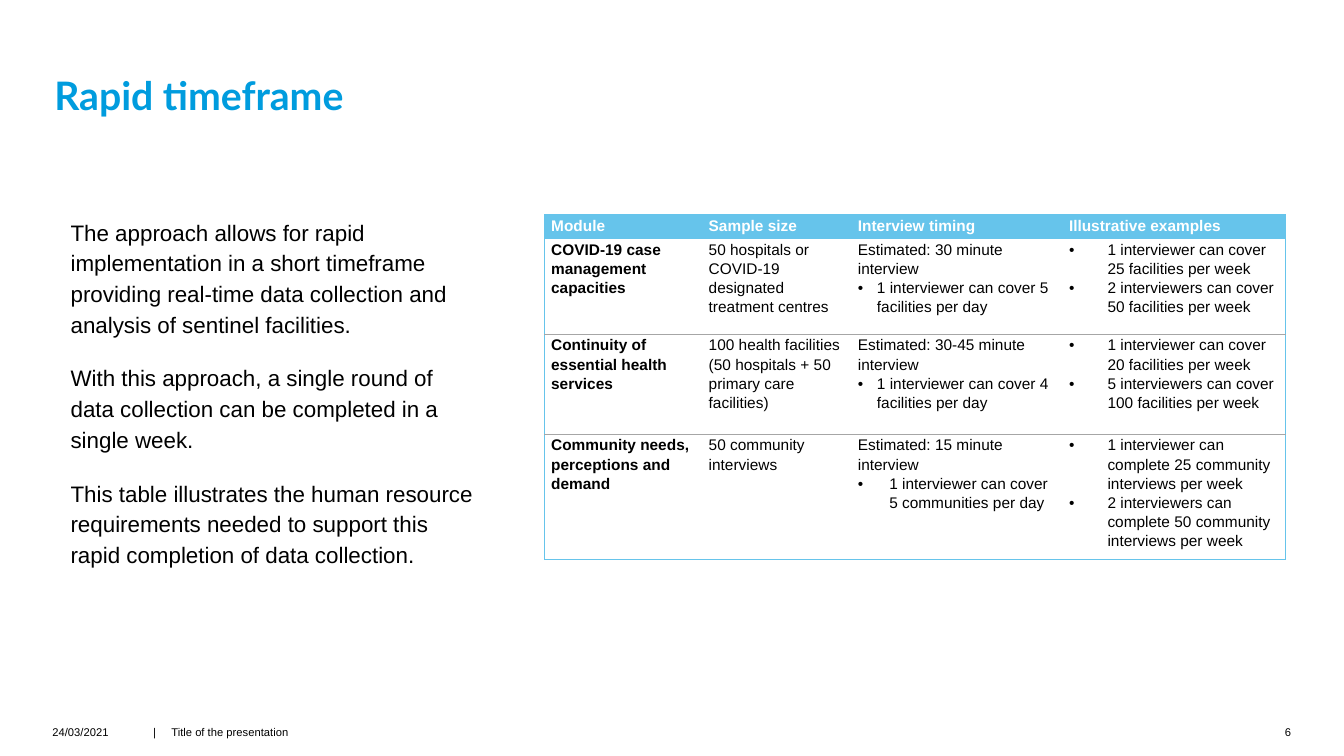
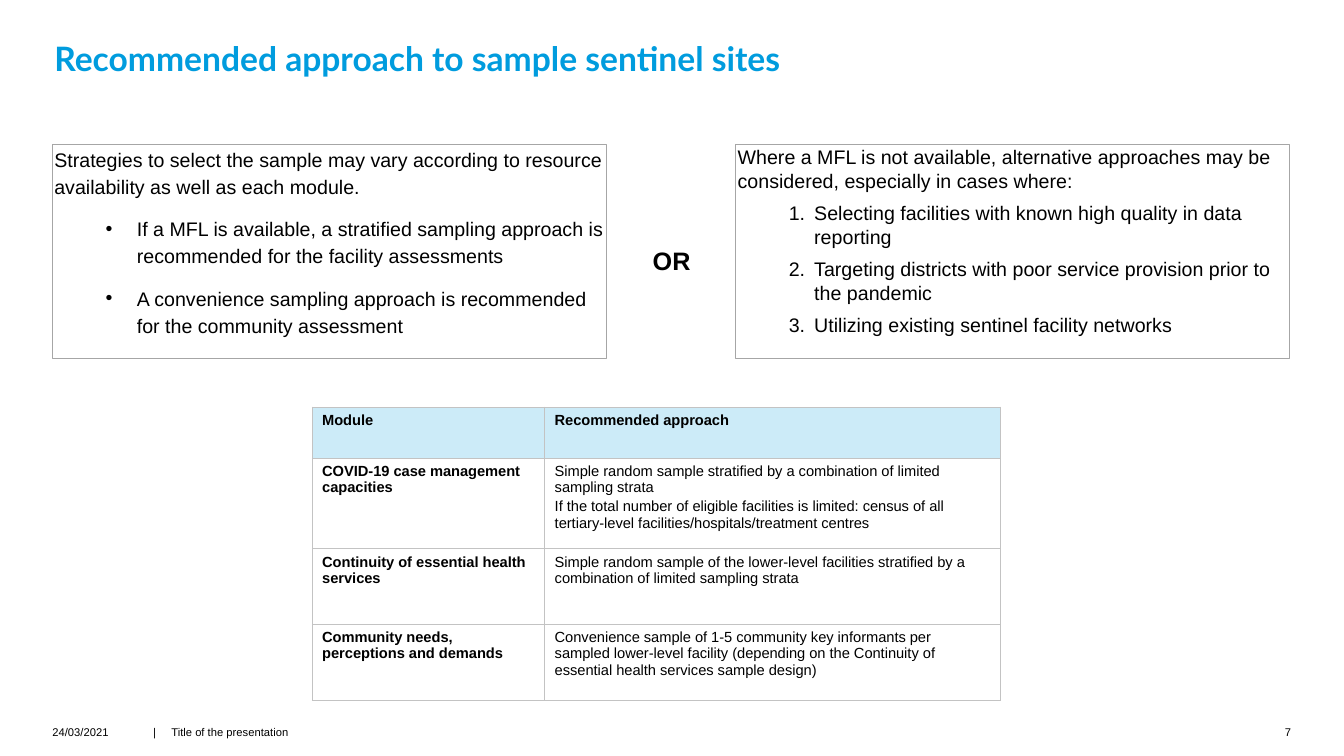
import pptx
import pptx.util
import pptx.dml.color
import pptx.enum.shapes
import pptx.enum.text
import pptx.oxml.ns
from lxml import etree

Cm, Pt = pptx.util.Cm, pptx.util.Pt
RGB = pptx.dml.color.RGBColor
ANCHOR = pptx.enum.text.MSO_ANCHOR
ALIGN = pptx.enum.text.PP_ALIGN
qn = pptx.oxml.ns.qn

# Colours
BLUE = RGB(0x00, 0x9C, 0xDE)
SKY = RGB(0x66, 0xC4, 0xEB)
PALE = RGB(0xCC, 0xEB, 0xF8)
GREY = RGB(0xA6, 0xA6, 0xA6)
SILVER = RGB(0xC3, 0xC3, 0xC3)
BLACK = RGB(0, 0, 0)
WHITE = RGB(0xFF, 0xFF, 0xFF)


def write(frame, text, size=14, color=BLACK, bold=False, font="Arial",
          align=ALIGN.LEFT, line=1.0, before=0, after=0,
          left=0, hang=0, mark=None):
    """Add a paragraph; mark is "•" or an automatic numbering type."""
    para = frame.paragraphs[0]
    if para.runs:
        para = frame.add_paragraph()
        para.space_before = Pt(before)
    if mark:
        props = para._p.get_or_add_pPr()
        props.set("marL", str(Cm(left)))
        props.set("indent", str(-Cm(hang)))
        if mark == "•":
            etree.SubElement(props, qn("a:buFont"), typeface="Arial")
            etree.SubElement(props, qn("a:buChar"), char=mark)
        else:
            etree.SubElement(props, qn("a:buAutoNum"), type=mark)
    para.alignment = align
    para.line_spacing = line
    para.space_after = Pt(after)
    run = para.add_run()
    run.text = text
    run.font.name, run.font.size = font, Pt(size)
    run.font.bold, run.font.color.rgb = bold, color


def edge(cell, side, color, width):
    """Set one cell border; no colour means no line."""
    props = cell._tc.get_or_add_tcPr()
    line = etree.SubElement(props, qn("a:ln" + side), w=str(Pt(width)))
    if color is None:
        etree.SubElement(line, qn("a:noFill"))
    else:
        fill = etree.SubElement(line, qn("a:solidFill"))
        etree.SubElement(fill, qn("a:srgbClr"), val=str(color))


deck = pptx.Presentation()
deck.slide_width, deck.slide_height = Cm(33.87), Cm(19.05)

# Titles and footers
heads = [
    ("Rapid timeframe", 28, 3.0),
    ("Recommended approach to sample sentinel sites", 24, 1.98),
]
slides = []
for page, (title, size, base) in enumerate(heads, start=6):
    slide = deck.slides.add_slide(deck.slide_layouts[6])
    slides.append(slide)
    head = dict(size=size, color=BLUE, bold=True, font="Lato", line=0.9)
    foot = dict(size=8)
    parts = [
        (1.37, 0.99, 21.6, base - 0.99, title, head),
        (1.32, 18.29, 2.2, 0.5, "24/03/2021", foot),
        (3.86, 18.29, 0.4, 0.5, "|", foot),
        (4.32, 18.29, 7.8, 0.5, "Title of the presentation", foot),
        (31.72, 18.29, 0.82, 0.5, str(page), dict(size=8, align=ALIGN.RIGHT)),
    ]
    for x, y, w, h, text, form in parts:
        frame = slide.shapes.add_textbox(Cm(x), Cm(y), Cm(w), Cm(h)).text_frame
        frame.word_wrap = True
        frame.margin_left = frame.margin_right = 0
        frame.margin_top = frame.margin_bottom = 0
        frame.vertical_anchor = ANCHOR.BOTTOM if form is head else ANCHOR.TOP
        write(frame, text, **form)
first, second = slides

# Body text and framed boxes
plain = dict(size=16, line=1.15, before=10, after=6)
loose = dict(line=1.15, after=6)
dot = dict(loose, before=5, left=2.08, hang=0.79, mark="•")
tight = dict(line=1.04)
count = dict(tight, before=5, left=1.93, hang=0.64, mark="arabicPeriod")
boxes = [
    (first, 1.73, 5.41, 10.41, 11.76, None, [
        ("The approach allows for rapid implementation in a short timeframe "
         "providing real-time data collection and analysis of sentinel "
         "facilities.", plain),
        ("With this approach, a single round of data collection can be "
         "completed in a single week.", plain),
        ("This table illustrates the human resource requirements needed to "
         "support this rapid completion of data collection.", plain),
    ]),
    (second, 1.32, 3.63, 13.97, 5.41, GREY, [
        ("Strategies to select the sample may vary according to resource "
         "availability as well as each module.", loose),
        ("If a MFL is available, a stratified sampling approach is "
         "recommended for the facility assessments", dot),
        ("A convenience sampling approach is recommended for the community "
         "assessment", dot),
    ]),
    (second, 18.54, 3.63, 13.97, 5.41, GREY, [
        ("Where a MFL is not available, alternative approaches may be "
         "considered, especially in cases where:", tight),
        ("Selecting facilities with known high quality in data reporting",
         count),
        ("Targeting districts with poor service provision prior to the "
         "pandemic", count),
        ("Utilizing existing sentinel facility networks", count),
    ]),
]
for slide, x, y, w, h, line, paras in boxes:
    box = slide.shapes.add_shape(pptx.enum.shapes.MSO_SHAPE.RECTANGLE,
                                 Cm(x), Cm(y), Cm(w), Cm(h))
    box.shadow.inherit = False
    box.fill.background()
    if line is None:
        box.line.fill.background()
    else:
        box.line.color.rgb = line
        box.line.width = Pt(0.75)
    frame = box.text_frame
    frame.word_wrap = True
    frame.vertical_anchor = ANCHOR.TOP
    frame.margin_left = Cm(0.05)
    frame.margin_right = frame.margin_top = frame.margin_bottom = 0
    for text, form in paras:
        write(frame, text, **form)

# Word between the boxes
mid = second.shapes.add_textbox(Cm(16.2), Cm(6.05), Cm(1.48), Cm(1.02))
mid.text_frame.word_wrap = False
write(mid.text_frame, "OR", size=18, bold=True)

# Tables: a cell lists its paragraphs, a pair is a bullet with its indent
times = [
    [["Module"], ["Sample size"], ["Interview timing"],
     ["Illustrative examples"]],
    [["COVID-19 case management capacities"],
     ["50 hospitals or COVID-19 designated treatment centres"],
     ["Estimated: 30 minute interview",
      ("1 interviewer can cover 5 facilities per day", 0.48)],
     [("1 interviewer can cover 25 facilities per week", 0.97),
      ("2 interviewers can cover 50 facilities per week", 0.97)]],
    [["Continuity of essential health services"],
     ["100 health facilities",
      "(50 hospitals + 50 primary care facilities)"],
     ["Estimated: 30-45 minute interview",
      ("1 interviewer can cover 4 facilities per day", 0.48)],
     [("1 interviewer can cover 20 facilities per week", 0.97),
      ("5 interviewers can cover 100 facilities per week", 0.97)]],
    [["Community needs, perceptions and demand"],
     ["50 community interviews"],
     ["Estimated: 15 minute interview",
      ("1 interviewer can cover 5 communities per day", 0.79)],
     [("1 interviewer can complete 25 community interviews per week", 0.97),
      ("2 interviewers can complete 50 community interviews per week",
       0.97)]],
]
plans = [
    [["Module"], ["Recommended approach"]],
    [["COVID-19 case management capacities"],
     ["Simple random sample stratified by a combination of limited sampling "
      "strata",
      "If the total number of eligible facilities is limited: census of all "
      "tertiary-level facilities/hospitals/treatment centres"]],
    [["Continuity of essential health services"],
     ["Simple random sample of the lower-level facilities stratified by a "
      "combination of limited sampling strata"]],
    [["Community needs, perceptions and demands"],
     ["Convenience sample of 1-5 community key informants per sampled "
      "lower-level facility (depending on the Continuity of essential health "
      "services sample design)"]],
]
# Each: slide, place, column widths, row heights, cells, text format,
# side and top margins, header fill and ink, outer, row and column lines
grids = [
    (first, 13.72, 5.41, [3.97, 3.76, 5.32, 5.62], [0.6, 2.41, 2.52, 3.0],
     times, dict(size=11, line=1.12), (0.17, 0.02, 0), SKY, WHITE,
     (SKY, GREY, None, 0.5)),
    (second, 7.87, 10.26, [5.86, 11.48], [1.28, 2.29, 1.9, 1.92],
     plans, dict(size=10.5, before=2), (0.25, 0.13, 0.13), PALE, BLACK,
     (SILVER, SILVER, SILVER, 0.75)),
]
for (slide, x, y, cols, rows, cells, form, pads, tint, ink,
     (rim, rule, post, width)) in grids:
    table = slide.shapes.add_table(len(rows), len(cols), Cm(x), Cm(y),
                                   Cm(sum(cols)), Cm(sum(rows))).table
    table.first_row = table.horz_banding = False
    for col, size in zip(table.columns, cols):
        col.width = Cm(size)
    for row, size in zip(table.rows, rows):
        row.height = Cm(size)
    for r, row in enumerate(cells):
        for c, paras in enumerate(row):
            cell = table.cell(r, c)
            cell.margin_left = cell.margin_right = Cm(pads[0])
            cell.margin_top, cell.margin_bottom = Cm(pads[1]), Cm(pads[2])
            edge(cell, "L", rim if c == 0 else post, width)
            edge(cell, "R", rim if c == len(cols) - 1 else post, width)
            edge(cell, "T", rim if r < 2 else rule, width)
            edge(cell, "B", rim if r in (0, len(rows) - 1) else rule, width)
            cell.fill.solid()
            cell.fill.fore_color.rgb = WHITE if r else tint
            for item in paras:
                look = dict(form, bold=r == 0 or c == 0,
                            color=BLACK if r else ink)
                if isinstance(item, tuple):
                    item, step = item
                    look.update(left=step, hang=step, mark="•")
                write(cell.text_frame, item, **look)

deck.save("out.pptx")
